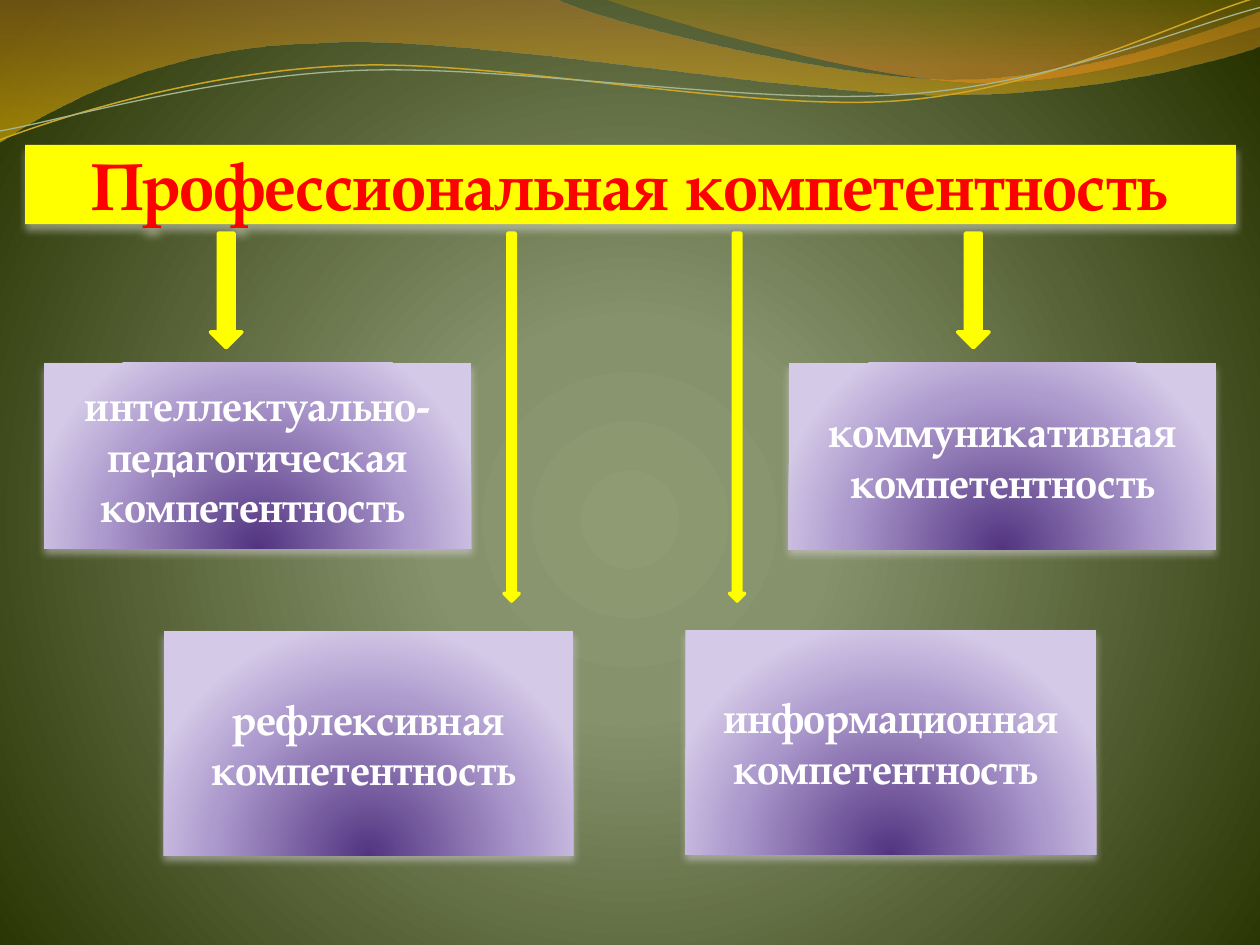
from math import cos, radians, sin

from lxml import etree
from pptx import Presentation
from pptx.dml.color import RGBColor
from pptx.enum.shapes import MSO_SHAPE
from pptx.enum.text import MSO_ANCHOR, MSO_AUTO_SIZE, PP_ALIGN
from pptx.oxml.ns import qn
from pptx.util import Inches, Pt

RECTANGLE, DOWN_ARROW = MSO_SHAPE.RECTANGLE, MSO_SHAPE.DOWN_ARROW
MIDDLE, BOTTOM = MSO_ANCHOR.MIDDLE, MSO_ANCHOR.BOTTOM
CENTER = PP_ALIGN.CENTER
NO_AUTOSIZE = MSO_AUTO_SIZE.NONE

FONT = "TeX Gyre Pagella"
YELLOW = RGBColor(0xFF, 0xFF, 0x00)
RED = RGBColor(0xFF, 0x00, 0x00)
WHITE = RGBColor(0xFF, 0xFF, 0xFF)
GOLD = RGBColor(0xCC, 0xA6, 0x24)
SAGE = RGBColor(0xA5, 0xB5, 0x92)
OLIVE_SHADOW = RGBColor(0xE0, 0xE4, 0xD8)
PURPLE_SHADOW = RGBColor(0xE4, 0xDF, 0xEA)

BACKGROUND_STOPS = [
    (0, RGBColor(0x8F, 0x9B, 0x72), 100),
    (25, RGBColor(0x86, 0x92, 0x6C), 100),
    (100, RGBColor(0x27, 0x32, 0x00), 100),
]
BOX_STOPS = [
    (0, RGBColor(0x52, 0x34, 0x81), 100),
    (68, RGBColor(0xAE, 0x9B, 0xCE), 100),
    (100, RGBColor(0xD4, 0xC9, 0xE7), 100),
]
LONG_WAVE_STOPS = [(0, RGBColor(0xC0, 0x7A, 0x28), 45), (100, RGBColor(0xF7, 0xBF, 0x00), 55)]
SHORT_WAVE_STOPS = [(0, RGBColor(0xC0, 0x97, 0x09), 30), (80, RGBColor(0xF5, 0x93, 0x20), 45)]
BACKGROUND_FOCUS = {"l": 10, "t": 110, "r": 10, "b": 100}
BOX_FOCUS = {"l": 50, "t": 130, "r": 50, "b": -30}

LONG_WAVE = [
    (0, 0), (4.4, -0.01),
    (4.76, 0.17, 6.64, 0.63, 7.58, 0.63), (8.53, 0.63, 9.58, 0.26, 10, 0.09),
    (10.01, 0.36),
    (9.83, 0.44, 8.7, 0.76, 7.46, 0.75), (6.22, 0.75, 3.82, 0.28, 2.57, 0.34),
    (1.29, 0.36, 0.46, 0.83, -0.01, 1.13), (0, 0),
]
SHORT_WAVE = [
    (4.79, -0.01),
    (5.09, 0.11, 6.82, 0.62, 7.69, 0.65), (8.56, 0.69, 9.61, 0.32, 10, 0.21),
    (10, 0), (4.79, -0.01),
]
GOLD_CURVE = [
    (0, 1.11),
    (0.48, 0.93, 1.58, 0.57, 2.77, 0.52), (3.95, 0.47, 5.93, 0.89, 7.13, 0.8),
    (8.33, 0.71, 9.38, 0.15, 9.98, -0.02),
]
SAGE_CURVE = [
    (0, 1.04),
    (0.47, 0.96, 1.64, 0.61, 2.83, 0.56), (4.03, 0.51, 5.97, 0.84, 7.17, 0.75),
    (8.36, 0.67, 9.41, 0.21, 10, 0.06),
]
CURVE_TILT = -2.7
BOXES = [
    ("интеллектуально-педагогическая компетентность ", 0.35, 2.88, 3.39, 1.47),
    ("коммуникативная компетентность", 6.26, 2.88, 3.39, 1.48),
    ("информационная компетентность ", 5.44, 5, 3.26, 1.78),
    ("рефлексивная компетентность ", 1.3, 5.01, 3.25, 1.78),
]
ARROWS = [(1.67, 0.25, 0.91), (7.6, 0.25, 0.91), (4, 0.12, 2.92), (5.79, 0.12, 2.92)]


def apply_format(target, values):
    """Set attributes of an object from a dict."""
    for name, value in values.items():
        setattr(target, name, value)


def add_color(parent, color, opacity):
    """Add an RGB colour with its opacity in percent."""
    element = etree.SubElement(parent, qn("a:srgbClr"), val=str(color))
    if opacity < 100:
        etree.SubElement(element, qn("a:alpha"), val=str(opacity * 1000))


def set_gradient(fill, owner, stops, focus=None):
    """Fill with a radial gradient around a focus, or a vertical one."""
    fill.solid()
    solid = owner.find(".//" + qn("a:solidFill"))
    gradient = etree.Element(qn("a:gradFill"), rotWithShape="1")
    stop_list = etree.SubElement(gradient, qn("a:gsLst"))
    for position, color, opacity in stops:
        stop = etree.SubElement(stop_list, qn("a:gs"), pos=str(position * 1000))
        add_color(stop, color, opacity)
    if focus:
        path = etree.SubElement(gradient, qn("a:path"), path="circle")
        sides = {side: str(percent * 1000) for side, percent in focus.items()}
        etree.SubElement(path, qn("a:fillToRect"), sides)
    else:
        etree.SubElement(gradient, qn("a:lin"), ang="5400000", scaled="0")
    solid.getparent().replace(solid, gradient)


def set_shadow(shape, color):
    """Give a shape a soft shadow below it."""
    shape.shadow.inherit = False
    effects = shape.element.spPr.find(qn("a:effectLst"))
    shadow = etree.SubElement(
        effects, qn("a:outerShdw"), blurRad=str(Pt(4.5)), dist=str(Pt(3)),
        dir="5400000", rotWithShape="0")
    add_color(shadow, color, 48)


def write_text(shape, text, frame_format, font_format, color):
    """Write one centred paragraph in a shape."""
    frame = shape.text_frame
    apply_format(frame, {"word_wrap": True, "auto_size": NO_AUTOSIZE, **frame_format})
    paragraph = frame.paragraphs[0]
    paragraph.alignment = CENTER
    run = paragraph.add_run()
    run.text = text
    apply_format(run.font, {"name": FONT, "bold": True, **font_format})
    run.font.color.rgb = color


def turn(segments, degrees):
    """Rotate segments about the middle of their end points."""
    xs, ys = zip(*(segment[-2:] for segment in segments))
    middle_x, middle_y = (min(xs) + max(xs)) / 2, (min(ys) + max(ys)) / 2
    cosine, sine = cos(radians(degrees)), sin(radians(degrees))
    turned = []
    for segment in segments:
        values = []
        for x, y in zip(segment[::2], segment[1::2]):
            x, y = x - middle_x, y - middle_y
            values += [middle_x + x * cosine - y * sine, middle_y + x * sine + y * cosine]
        turned.append(tuple(values))
    return turned


def add_outline(slide, segments, close):
    """Add a freeform of lines and Bezier curves."""
    points = [tuple(map(Inches, segment[-2:])) for segment in segments]
    builder = slide.shapes.build_freeform(*points[0])
    builder.add_line_segments(points[1:], close=close)
    shape = builder.convert_to_shape()
    shape.shadow.inherit = False
    lines = list(shape.element.iter(qn("a:lnTo")))
    for line, segment in zip(lines, segments[1:]):
        if len(segment) == 6:
            curve = etree.Element(qn("a:cubicBezTo"))
            for x, y in zip(segment[::2], segment[1::2]):
                etree.SubElement(curve, qn("a:pt"), x=str(Inches(x) - shape.left),
                                 y=str(Inches(y) - shape.top))
            line.getparent().replace(line, curve)
    return shape


def move_to_layout(slide, shape):
    """Move a decoration from the slide to its layout."""
    layout = slide.slide_layout
    number = max(item.shape_id for item in layout.shapes) + 1
    shape.element.nvSpPr.cNvPr.set("id", str(number))
    layout.element.cSld.spTree.append(shape.element)


def add_wave(slide, segments, stops):
    """Add a translucent wave."""
    shape = add_outline(slide, segments, True)
    shape.line.fill.background()
    set_gradient(shape.fill, shape.element.spPr, stops)
    move_to_layout(slide, shape)


def add_curve(slide, segments, color, width):
    """Add a thin tilted curve."""
    shape = add_outline(slide, turn(segments, -CURVE_TILT), False)
    shape.rotation = CURVE_TILT
    shape.fill.background()
    shape.line.color.rgb = color
    shape.line.width = Pt(width)
    move_to_layout(slide, shape)


def format_title(title, text):
    """Place and format the title banner."""
    apply_format(title, {"left": Inches(0.2), "top": Inches(1.15),
                         "width": Inches(9.61), "height": Inches(0.63)})
    title.fill.solid()
    title.fill.fore_color.rgb = YELLOW
    set_shadow(title, OLIVE_SHADOW)
    margins = {"margin_left": 0, "margin_top": 0, "margin_right": Inches(0.02), "margin_bottom": 0}
    write_text(title, text, {"vertical_anchor": BOTTOM, **margins}, {"size": Pt(38)}, RED)


def add_box(slide, text, *bounds):
    """Add a purple competence box."""
    shape = slide.shapes.add_shape(RECTANGLE, *map(Inches, bounds))
    shape.line.fill.background()
    set_gradient(shape.fill, shape.element.spPr, BOX_STOPS, BOX_FOCUS)
    set_shadow(shape, PURPLE_SHADOW)
    write_text(shape, text, {"vertical_anchor": MIDDLE}, {"size": Pt(24)}, WHITE)


def add_arrow(slide, *bounds):
    """Add a yellow arrow pointing down from the banner."""
    left, width, height = map(Inches, bounds)
    shape = slide.shapes.add_shape(DOWN_ARROW, left, Inches(1.85), width, height)
    shape.shadow.inherit = False
    shape.fill.solid()
    shape.fill.fore_color.rgb = shape.line.color.rgb = YELLOW
    shape.line.width = Pt(2)


def main():
    """Build the competence slide."""
    presentation = Presentation()
    apply_format(presentation, {"slide_width": Inches(10), "slide_height": Inches(7.5)})
    slide = presentation.slides.add_slide(presentation.slide_layouts[5])
    set_gradient(slide.background.fill, slide.element, BACKGROUND_STOPS, BACKGROUND_FOCUS)
    add_wave(slide, LONG_WAVE, LONG_WAVE_STOPS)
    add_wave(slide, SHORT_WAVE, SHORT_WAVE_STOPS)
    add_curve(slide, GOLD_CURVE, GOLD, 0.85)
    add_curve(slide, SAGE_CURVE, SAGE, 0.75)
    format_title(slide.shapes.title, "Профессиональная компетентность")
    for box in BOXES:
        add_box(slide, *box)
    for arrow in ARROWS:
        add_arrow(slide, *arrow)
    presentation.save("out.pptx")


if __name__ == "__main__":
    main()
